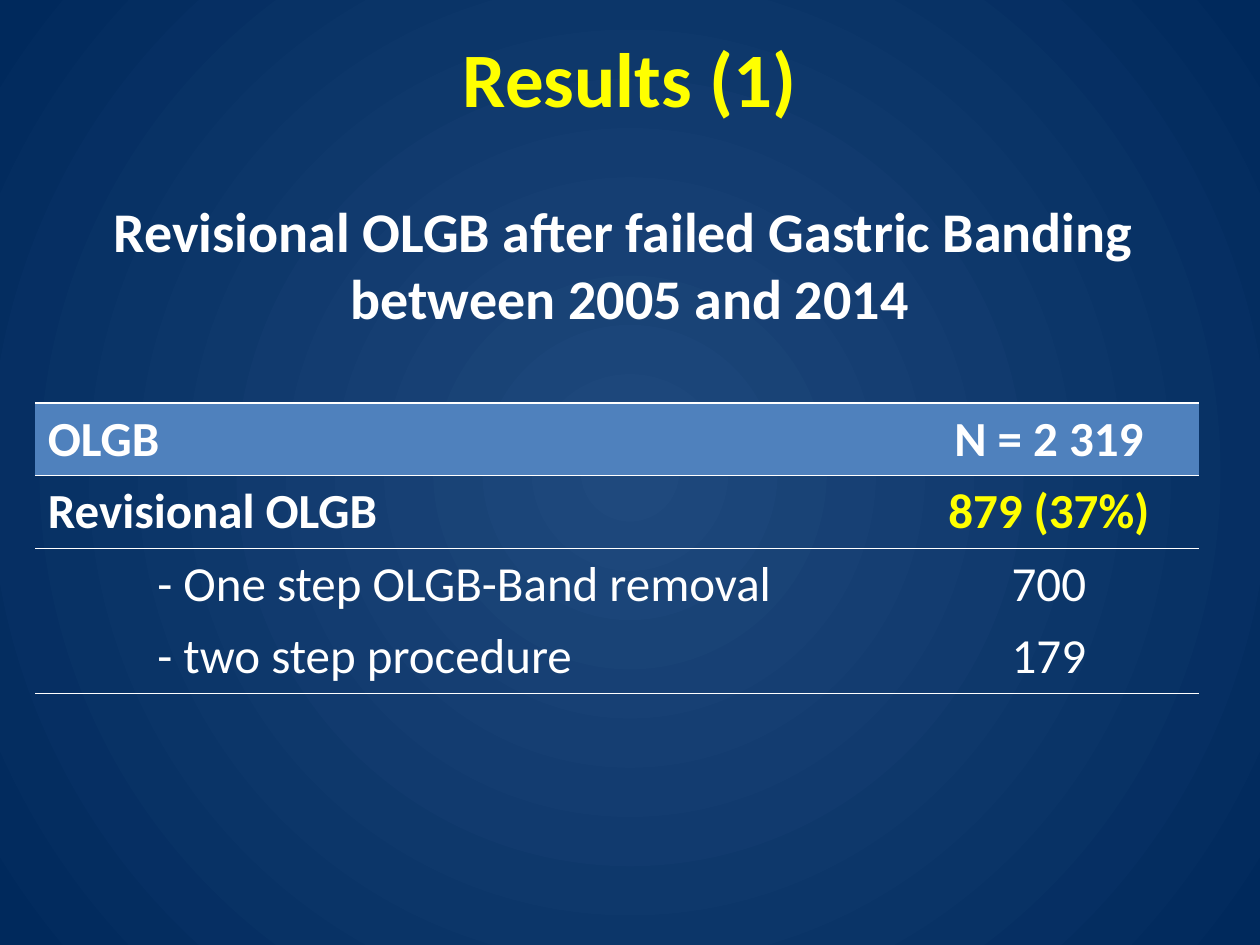
from lxml import etree
from pptx import Presentation, util as u
from pptx.dml.color import RGBColor
from pptx.enum import text as t
from pptx.oxml import parse_xml
from pptx.oxml.ns import nsdecls, qn

# Content
HEAD = "Results (1)"
TITLE = "Revisional OLGB after failed Gastric Banding \vbetween 2005 and 2014"
# label, value, bold, value colour, indent, header fill, ruled edges
ROWS = [
    ("OLGB", "N = 2 319", True, "white", 0, "blue", "TB"),
    ("Revisional OLGB", "879 (37%)", True, "gold", 0, None, "T"),
    ("- One step OLGB-Band removal", "700", False, "white", 0.87, None, ""),
    ("- two step procedure", "179", False, "white", 0.87, None, "B"),
]
COLS = [6.85, 2.39]
ROW = 0.575
INK = {"white": "FFFFFF", "gold": "FFFF00", "blue": "4F81BD",
       "mid": "1F497D", "edge": "00295C"}
PLAIN = "{2D5ABB26-0587-4C30-8999-92F81FD0307C}"  # table style without grid


def rgb(name):
    return RGBColor.from_string(INK[name])


def write(frame, words, size, ink="white", bold=True, align="CENTER"):
    frame.text = words
    for para in frame.paragraphs:
        para.alignment = getattr(t.PP_ALIGN, align)
        for run in para.runs:
            form = {"name": "Calibri", "size": u.Pt(size), "bold": bold}
            for key, val in form.items():
                setattr(run.font, key, val)
            run.font.color.rgb = rgb(ink)


def place(shape, *box):
    for key, val in zip(("left", "top", "width", "height"), box):
        setattr(shape, key, u.Inches(val))
    shape.text_frame.word_wrap = True
    shape.text_frame.vertical_anchor = t.MSO_ANCHOR.MIDDLE


def rule(cell, sides):
    props = cell._tc.get_or_add_tcPr()
    for side in reversed(sides):
        props.insert(0, parse_xml(
            f'<a:ln{side} {nsdecls("a")} w="12700"><a:solidFill>'
            f'<a:srgbClr val="{INK["white"]}"/></a:solidFill></a:ln{side}>'))


deck = Presentation()
deck.slide_width, deck.slide_height = u.Inches(10), u.Inches(7.5)
slide = deck.slides.add_slide(deck.slide_layouts[5])

# Background: glow from the centre
fill = slide.background.fill
fill.gradient()
for stop, name, pos in zip(fill.gradient_stops, ("mid", "edge"), (0, 1)):
    stop.color.rgb, stop.position = rgb(name), pos
grad = slide.background._cSld.find(".//" + qn("a:gradFill"))
grad.remove(grad.find(qn("a:lin")))
path = etree.SubElement(grad, qn("a:path"), {"path": "circle"})
etree.SubElement(path, qn("a:fillToRect"), dict.fromkeys("ltrb", "50000"))

# Title
title = slide.shapes.title
place(title, 0, 1.47, 10, 1.25)
write(title.text_frame, TITLE, 32)

# Table
frame = slide.shapes.add_table(
    len(ROWS), len(COLS), u.Inches(0.28), u.Inches(3.2),
    u.Inches(sum(COLS)), u.Inches(ROW * len(ROWS)))
table = frame.table
table.horz_banding = False
table._tbl.tblPr.find(qn("a:tableStyleId")).text = PLAIN
for col, wide in zip(table.columns, COLS):
    col.width = u.Inches(wide)
for row, (label, value, bold, ink, indent, shade, sides) in zip(table.rows, ROWS):
    row.height = u.Inches(ROW)
    left, right = row.cells
    write(left.text_frame, label, 28, "white", bold, "LEFT")
    write(right.text_frame, value, 28, ink, bold)
    left.margin_left = u.Inches(0.1 + indent)
    for cell in row.cells:
        if shade:
            cell.fill.solid()
            cell.fill.fore_color.rgb = rgb(shade)
        else:
            cell.fill.background()
        rule(cell, sides)

# Heading
head = slide.shapes.add_textbox(0, 0, 0, 0)
place(head, 0, -0.02, 10, 1.25)
write(head.text_frame, HEAD, 44, "gold")

deck.save("out.pptx")
